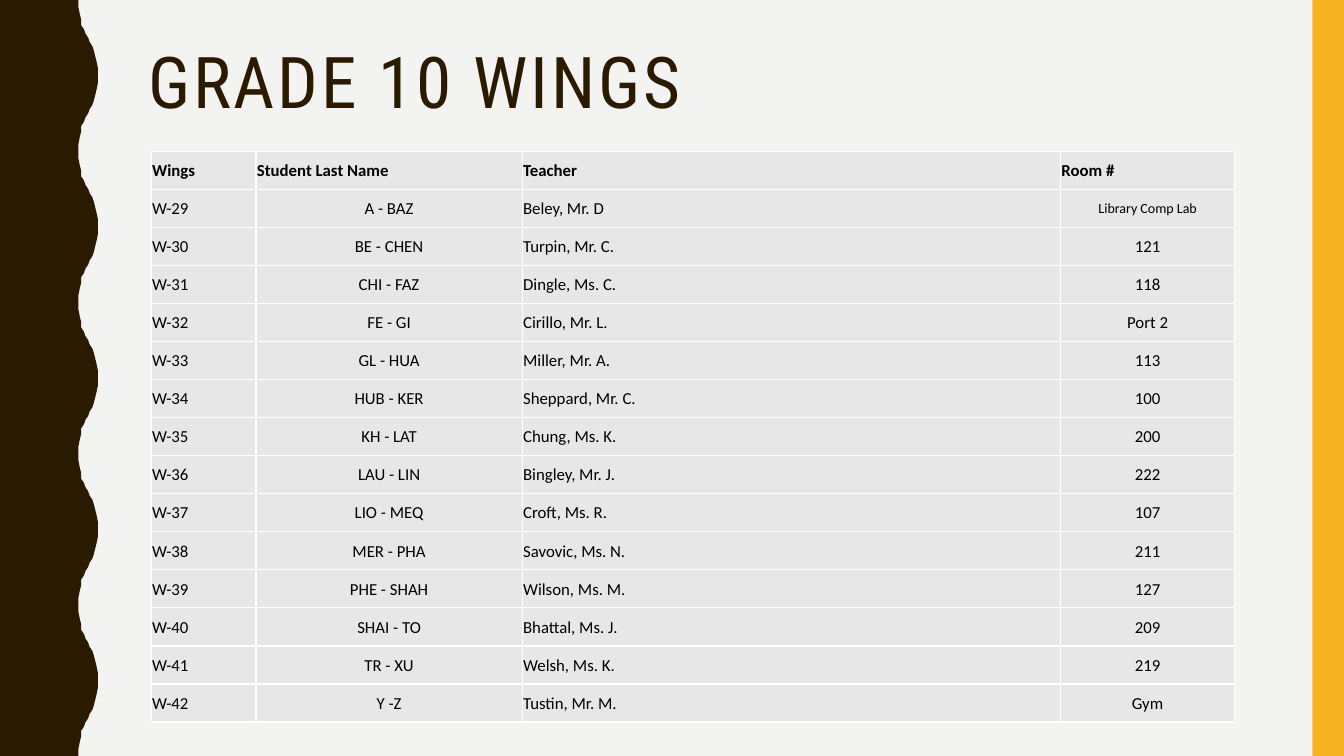
"""Build the Grade 10 wings slide with its room table."""
import pptx
import pptx.util
import pptx.dml.color
import pptx.enum.shapes
import pptx.enum.text
import pptx.oxml
import pptx.oxml.ns

Pt = pptx.util.Pt
RGB = pptx.dml.color.RGBColor.from_string
ALIGN = pptx.enum.text.PP_ALIGN
ANCHOR = pptx.enum.text.MSO_ANCHOR
COLORS = {"bg": "F3F3F2", "brown": "2A1A00", "gold": "F8B323",
          "cell": "E7E7E7", "border": "FFFFFF", "text": "000000"}
SLIDE_W, SLIDE_H = 960, 540


def write(tf, text, size=12, font="Calibri", color="text", bold=False,
          align=ALIGN.LEFT, spacing=None, tracking=0):
    p = tf.paragraphs[0]
    p.alignment = align
    p.line_spacing = spacing
    r = p.add_run()
    r.text = text
    r.font.size = Pt(size)
    r.font.name = font
    r.font.bold = bold
    r.font.color.rgb = RGB(COLORS[color])
    if tracking:
        r.font._element.set("spc", str(tracking * 100))


def set_borders(cell, color, width):
    tcPr = cell._tc.get_or_add_tcPr()
    for i, side in enumerate(("lnL", "lnR", "lnT", "lnB")):
        ln = pptx.oxml.parse_xml(
            f'<a:{side} {pptx.oxml.ns.nsdecls("a")} w="{Pt(width)}"><a:solidFill>'
            f'<a:srgbClr val="{color}"/></a:solidFill></a:{side}>')
        tcPr.insert(i, ln)


prs = pptx.Presentation()
prs.slide_width, prs.slide_height = Pt(SLIDE_W), Pt(SLIDE_H)
s = prs.slides.add_slide(prs.slide_layouts.get_by_name("Title Only"))
s.background.fill.solid()
s.background.fill.fore_color.rgb = RGB(COLORS["bg"])

period = 108
rise = [(56, 0), (56.3, 5), (56.9, 10), (57.6, 14.4), (58.5, 18), (59.8, 21),
        (61.2, 24), (62.8, 27), (64.2, 30), (65.6, 33), (67, 36),
        (68.3, 39.6), (69.3, 44), (69.9, 49), (70.1, 54)]
wave = rise + [(x, period - y) for x, y in rise[-2::-1]]
edge = [(x, y + k * period) for k in range(SLIDE_H // period) for x, y in wave]
fb = s.shapes.build_freeform(0, 0, scale=float(Pt(1)))
fb.add_line_segments(edge + [(0, SLIDE_H)], close=True)
wavy_band = fb.convert_to_shape()

gold_bar = s.shapes.add_shape(pptx.enum.shapes.MSO_SHAPE.RECTANGLE,
                              Pt(937.5), 0, Pt(22.5), Pt(SLIDE_H))
for sp, color in ((wavy_band, "brown"), (gold_bar, "gold")):
    sp.shadow.inherit = False
    sp.fill.solid()
    sp.fill.fore_color.rgb = RGB(COLORS[color])
    sp.line.fill.background()

title = s.shapes.title
title.left, title.top, title.width, title.height = Pt(98.6), Pt(30), Pt(801.4), Pt(117.4)
tf = title.text_frame
tf.word_wrap = True
tf.auto_size = pptx.enum.text.MSO_AUTO_SIZE.NONE
tf.vertical_anchor = ANCHOR.TOP
write(tf, "GRADE 10 WINGS", size=51, font="Roboto Condensed", color="brown",
      spacing=0.9, tracking=2)

header = ("Wings", "Student Last Name", "Teacher", "Room #")
wings = [
    ("A - BAZ", "Beley, Mr. D", "Library Comp Lab"),
    ("BE - CHEN", "Turpin, Mr. C.", "121"),
    ("CHI - FAZ", "Dingle, Ms. C.", "118"),
    ("FE - GI", "Cirillo, Mr. L.", "Port 2"),
    ("GL - HUA", "Miller, Mr. A.", "113"),
    ("HUB - KER", "Sheppard, Mr. C.", "100"),
    ("KH - LAT", "Chung, Ms. K.", "200"),
    ("LAU - LIN", "Bingley, Mr. J.", "222"),
    ("LIO - MEQ", "Croft, Ms. R.", "107"),
    ("MER - PHA", "Savovic, Ms. N.", "211"),
    ("PHE - SHAH", "Wilson, Ms. M.", "127"),
    ("SHAI - TO", "Bhattal, Ms. J.", "209"),
    ("TR - XU", "Welsh, Ms. K.", "219"),
    ("Y -Z", "Tustin, Mr. M.", "Gym"),
]
rows = [header] + [(f"W-{n}", *wing) for n, wing in enumerate(wings, 29)]
col_widths = (74.9, 190.1, 384.5, 124.5)
row_height = 27.2
table = s.shapes.add_table(len(rows), len(col_widths), Pt(108), Pt(108),
                           Pt(sum(col_widths)), Pt(row_height * len(rows))).table
for col, width in zip(table.columns, col_widths):
    col.width = Pt(width)
for i, row in enumerate(rows):
    table.rows[i].height = Pt(row_height)
    for j, text in enumerate(row):
        cell = table.cell(i, j)
        cell.margin_left = cell.margin_right = cell.margin_top = Pt(0.7)
        cell.margin_bottom = 0
        cell.vertical_anchor = ANCHOR.MIDDLE
        cell.fill.solid()
        cell.fill.fore_color.rgb = RGB(COLORS["cell"])
        set_borders(cell, COLORS["border"], 1)
        write(cell.text_frame, text, size=10 if text == "Library Comp Lab" else 12,
              bold=i == 0, align=ALIGN.CENTER if i and j in (1, 3) else ALIGN.LEFT)

prs.save("out.pptx")
